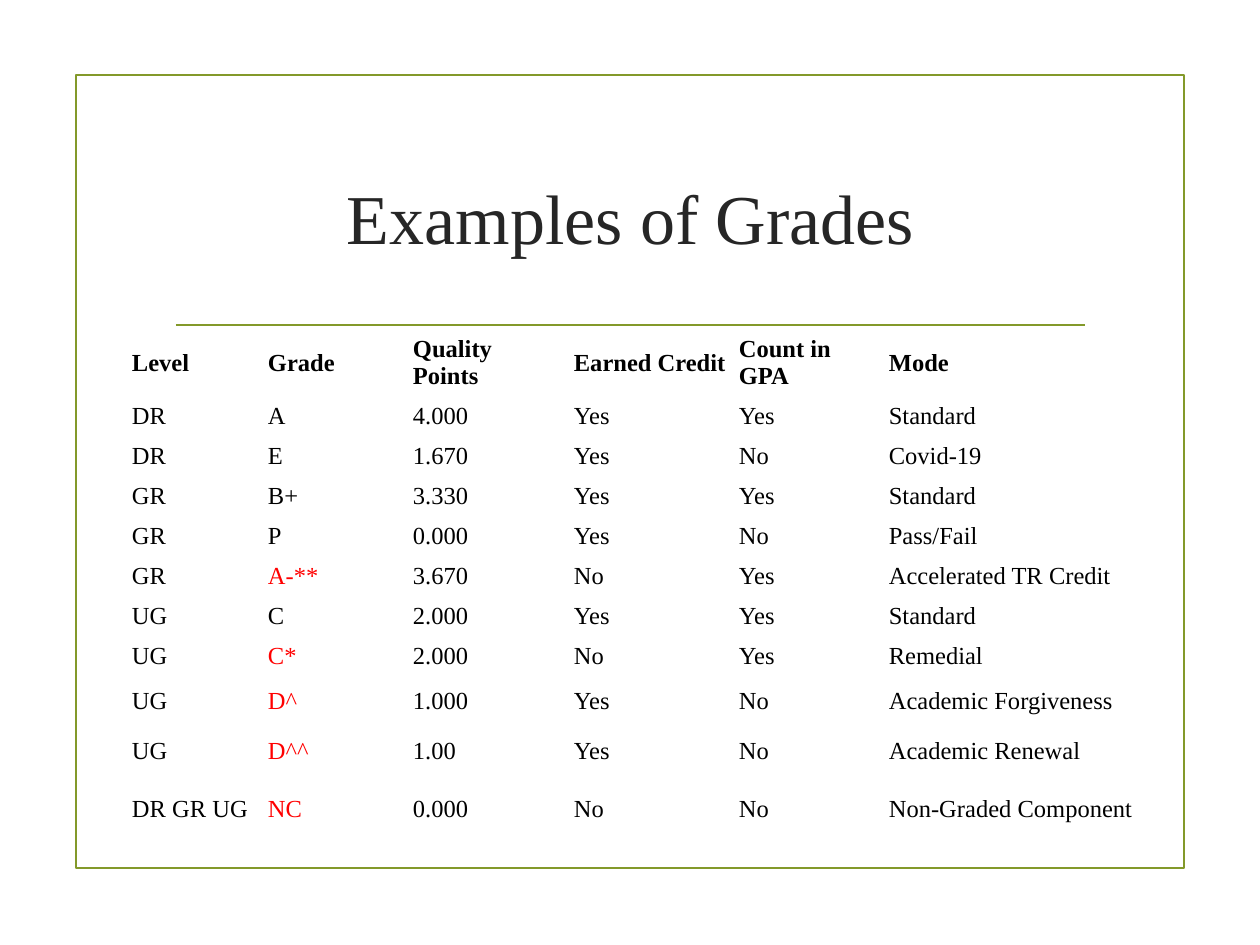
import dataclasses

import pptx
import pptx.dml.color
import pptx.enum.shapes
import pptx.enum.text
import pptx.oxml
import pptx.oxml.ns
import pptx.util

SCALE = 914400 / 126
ALIGN = pptx.enum.text.PP_ALIGN
MIDDLE = pptx.enum.text.MSO_ANCHOR.MIDDLE


@dataclasses.dataclass(frozen=True)
class Theme:
    font: str = "Times New Roman"
    green: str = "83992A"
    dark: str = "262626"
    black: str = "000000"
    red: str = "FF0000"
    white: str = "FFFFFF"
    head: int = 40
    body: int = 14
    line: float = 1.25
    rule: int = 1
    thick: int = 3


THEME = Theme()

COLS = [136, 145, 161, 165, 150, 265]
ROWS = [66] + [40] * 7 + [50, 50, 66]
INSET = 6

GRADES = [
    ("Level", "Grade", "Quality Points", "Earned Credit", "Count in GPA", "Mode"),
    ("DR", "A", "4.000", "Yes", "Yes", "Standard"),
    ("DR", "E", "1.670", "Yes", "No", "Covid-19"),
    ("GR", "B+", "3.330", "Yes", "Yes", "Standard"),
    ("GR", "P", "0.000", "Yes", "No", "Pass/Fail"),
    ("GR", "A-**", "3.670", "No", "Yes", "Accelerated TR Credit"),
    ("UG", "C", "2.000", "Yes", "Yes", "Standard"),
    ("UG", "C*", "2.000", "No", "Yes", "Remedial"),
    ("UG", "D^", "1.000", "Yes", "No", "Academic Forgiveness"),
    ("UG", "D^^", "1.00", "Yes", "No", "Academic Renewal"),
    ("DR GR UG", "NC", "0.000", "No", "No", "Non-Graded Component"),
]
MARKED = {"A-**", "C*", "D^", "D^^", "NC"}


def px(*sizes):
    return [pptx.util.Emu(round(size * SCALE)) for size in sizes]


def rgb(code):
    return pptx.dml.color.RGBColor.from_string(code)


def put_text(frame, text, size=THEME.body, color=THEME.black, bold=False,
             align=ALIGN.LEFT):
    frame.word_wrap = True
    para = frame.paragraphs[0]
    para.alignment = align
    run = para.add_run()
    run.text = text
    run.font.name = THEME.font
    run.font.size = pptx.util.Pt(size)
    run.font.bold = bold
    run.font.color.rgb = rgb(color)


def set_line(shape):
    shape.line.color.rgb = rgb(THEME.green)
    shape.line.width = pptx.util.Pt(THEME.line)


def add_frame(slide, *box):
    kind = pptx.enum.shapes.MSO_SHAPE.RECTANGLE
    frame = slide.shapes.add_shape(kind, *px(*box))
    frame.shadow.inherit = False
    frame.fill.background()
    set_line(frame)


def add_rule(slide, left, right, top):
    kind = pptx.enum.shapes.MSO_CONNECTOR.STRAIGHT
    rule = slide.shapes.add_connector(kind, *px(left, top, right, top))
    set_line(rule)
    rule._element.spPr.append(pptx.oxml.parse_xml(
        f'<a:effectLst {pptx.oxml.ns.nsdecls("a")}/>'))


def set_title(slide, text, *box):
    title = slide.shapes.title
    title.left, title.top, title.width, title.height = px(*box)
    title.text_frame.vertical_anchor = MIDDLE
    put_text(title.text_frame, text, size=THEME.head, color=THEME.dark,
             align=ALIGN.CENTER)


def set_edges(cell, base):
    """Draw the four cell borders; base is the bottom width in points."""
    props = cell._tc.get_or_add_tcPr()
    for side in "LRTB":
        width = pptx.util.Pt(base if side == "B" else THEME.rule)
        props.append(pptx.oxml.parse_xml(
            f'<a:ln{side} {pptx.oxml.ns.nsdecls("a")} w="{width}"><a:solidFill>'
            f'<a:srgbClr val="{THEME.white}"/></a:solidFill></a:ln{side}>'))


def fill_cell(cell, text, header, base):
    set_edges(cell, base)
    cell.fill.background()
    cell.vertical_anchor = MIDDLE
    (cell.margin_left, cell.margin_top,
     cell.margin_right, cell.margin_bottom) = px(*[INSET] * 4)
    color = THEME.red if text in MARKED else THEME.black
    put_text(cell.text_frame, text, color=color, bold=header)


def add_grid(slide, left, top):
    box = px(left, top, sum(COLS), sum(ROWS))
    table = slide.shapes.add_table(len(ROWS), len(COLS), *box).table
    table.horz_banding = False
    for col, width in zip(table.columns, px(*COLS)):
        col.width = width
    for row, height in zip(table.rows, px(*ROWS)):
        row.height = height
    for r, grades in enumerate(GRADES):
        header = r == 0
        base = THEME.thick if header else THEME.rule
        for c, text in enumerate(grades):
            fill_cell(table.cell(r, c), text, header, base)


def main():
    deck = pptx.Presentation()
    deck.slide_width, deck.slide_height = px(1260, 945)
    slide = deck.slides.add_slide(deck.slide_layouts.get_by_name("Title Only"))
    add_frame(slide, 76, 75, 1108, 793)
    add_rule(slide, 176, 1085, 325)
    set_title(slide, "Examples of Grades", 162, 126, 937, 180)
    add_grid(slide, 126, 330)
    deck.save("out.pptx")


if __name__ == "__main__":
    main()
